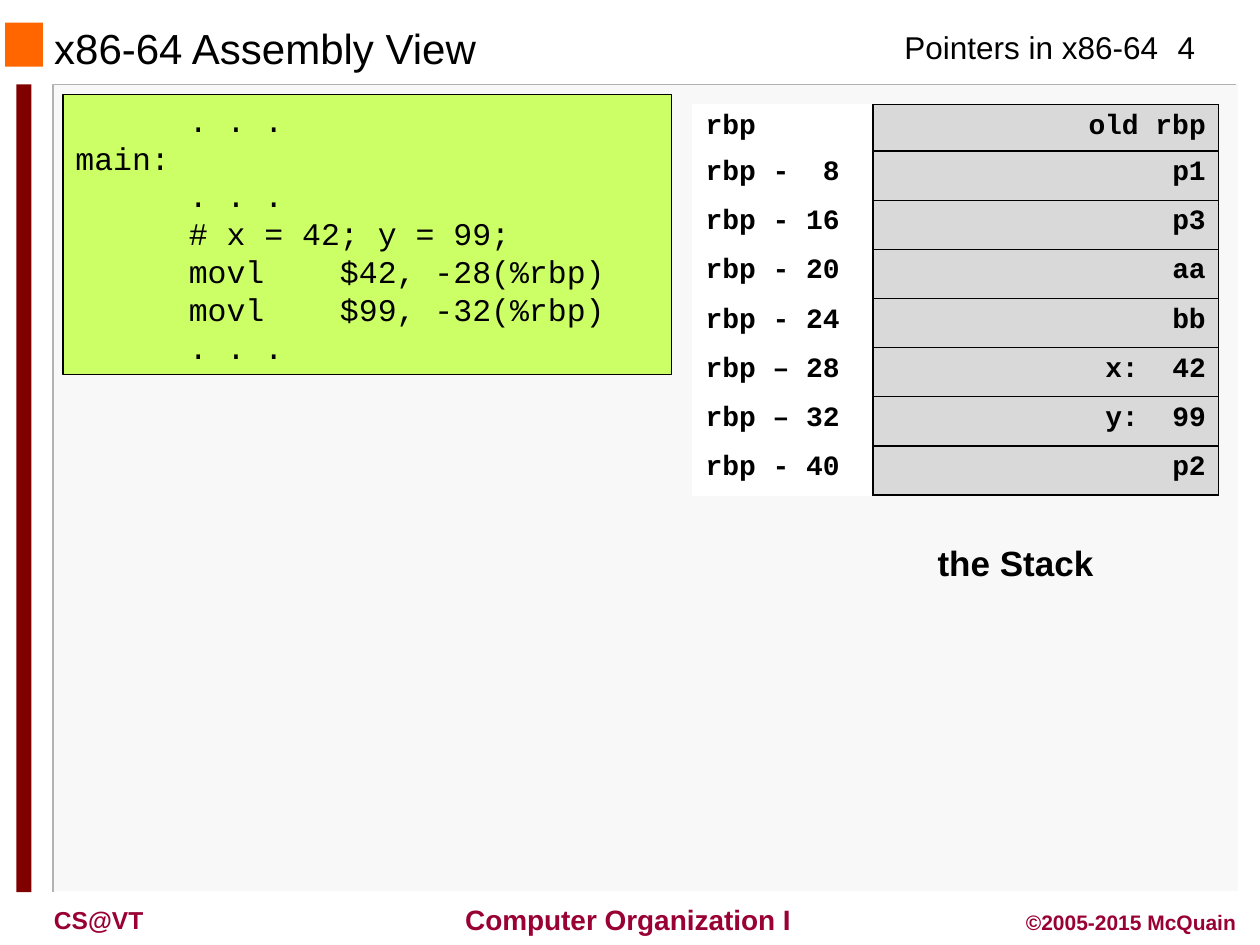
from typing import NamedTuple

from lxml.etree import SubElement
from pptx import Presentation
from pptx.dml.color import RGBColor
from pptx.enum.shapes import MSO_SHAPE
from pptx.enum.text import MSO_ANCHOR, PP_ALIGN
from pptx.oxml.ns import qn
from pptx.util import Inches, Pt

BLACK = RGBColor(0x00, 0x00, 0x00)
WHITE = RGBColor(0xFF, 0xFF, 0xFF)
PANEL = RGBColor(0xF8, 0xF8, 0xF8)
EDGE = RGBColor(0xB2, 0xB2, 0xB2)
ORANGE = RGBColor(0xFF, 0x66, 0x00)
MAROON = RGBColor(0x80, 0x00, 0x00)
CRIMSON = RGBColor(0x99, 0x00, 0x33)
LIME = RGBColor(0xCC, 0xFF, 0x66)
GREY = RGBColor(0xD9, 0xD9, 0xD9)

SANS, MONO = "Arial", "Courier New"
LEFT, CENTER, RIGHT = PP_ALIGN.LEFT, PP_ALIGN.CENTER, PP_ALIGN.RIGHT
CODE_INDENT = 0.9  # six characters of 18 pt Courier New


class Box(NamedTuple):
    left: float
    top: float
    width: float
    height: float

    def lengths(self) -> list:
        return [Inches(v) for v in self]


class Label(NamedTuple):
    text: str
    box: Box
    size: int
    color: RGBColor = BLACK
    bold: bool = False
    align: PP_ALIGN = LEFT
    wrap: bool = True
    anchor: MSO_ANCHOR = MSO_ANCHOR.TOP


class CodeLine(NamedTuple):
    text: str
    indent: float = CODE_INDENT


class Slot(NamedTuple):
    address: str
    value: str


LABELS = [
    Label("Pointers in x86-64", Box(7.08, 0.17, 2.24, 0.4), 18, wrap=False),
    Label("4", Box(9.08, 0.17, 0.67, 0.4), 18, align=CENTER),
    Label("Computer Organization I", Box(3.53, 7.11, 2.91, 0.37), 16, CRIMSON,
          True, CENTER, False, MSO_ANCHOR.MIDDLE),
    Label("CS@VT", Box(0.33, 7.13, 1.5, 0.33), 14, CRIMSON, True),
    Label("©2005-2015 McQuain", Box(7.83, 7.17, 2.08, 0.3), 12, CRIMSON, True, RIGHT),
    Label("the Stack", Box(7.08, 4.25, 1.96, 0.44), 20, bold=True, align=CENTER),
]

CODE = [
    CodeLine(". . ."),
    CodeLine("main:", 0),
    CodeLine(". . ."),
    CodeLine("# x = 42; y = 99;"),
    CodeLine("movl    $42, -28(%rbp)"),
    CodeLine("movl    $99, -32(%rbp)"),
    CodeLine(". . ."),
]

STACK = [
    Slot("rbp", "old rbp"),
    Slot("rbp -  8", "p1"),
    Slot("rbp - 16", "p3"),
    Slot("rbp - 20", "aa"),
    Slot("rbp - 24", "bb"),
    Slot("rbp – 28", "x:  42"),
    Slot("rbp – 32", "y:  99"),
    Slot("rbp - 40", "p2"),
]


def write(p, text: str, *, size: int, font: str = SANS, color: RGBColor = BLACK,
          bold: bool = False, align: PP_ALIGN = LEFT, indent: float = 0) -> None:
    p.alignment = align
    if indent:
        p._p.get_or_add_pPr().set("marL", str(Inches(indent)))
    r = p.add_run()
    r.text = text
    r.font.name, r.font.size, r.font.bold = font, Pt(size), bold
    r.font.color.rgb = color


def add_rect(s, box: Box, fill: RGBColor):
    sp = s.shapes.add_shape(MSO_SHAPE.RECTANGLE, *box.lengths())
    sp.shadow.inherit = False
    sp.fill.solid()
    sp.fill.fore_color.rgb = fill
    sp.line.fill.background()
    return sp


def add_corner(s, points: list, color: RGBColor) -> None:
    (x, y), *rest = points
    builder = s.shapes.build_freeform(Inches(x), Inches(y))
    builder.add_line_segments([(Inches(a), Inches(b)) for a, b in rest], close=False)
    sp = builder.convert_to_shape()
    sp.shadow.inherit = False
    sp.fill.background()
    sp.line.color.rgb = color
    sp.line.width = Pt(1)


def add_label(s, label: Label) -> None:
    tf = s.shapes.add_textbox(*label.box.lengths()).text_frame
    tf.word_wrap = label.wrap
    tf.vertical_anchor = label.anchor
    write(tf.paragraphs[0], label.text, size=label.size, color=label.color,
          bold=label.bold, align=label.align)


def add_code(s, box: Box, lines: list) -> None:
    sp = add_rect(s, box, LIME)
    sp.line.color.rgb = BLACK
    sp.line.width = Pt(0.75)
    tf = sp.text_frame
    tf.word_wrap = True
    tf.vertical_anchor = MSO_ANCHOR.TOP
    for i, line in enumerate(lines):
        p = tf.add_paragraph() if i else tf.paragraphs[0]
        write(p, line.text, size=18, font=MONO, indent=line.indent)


def set_borders(cell, sides: dict) -> None:
    tc_pr = cell._tc.get_or_add_tcPr()
    for i, (side, color) in enumerate(sides.items()):
        ln = SubElement(tc_pr, qn(f"a:ln{side}"), w=str(Pt(1)))
        SubElement(SubElement(ln, qn("a:solidFill")), qn("a:srgbClr"), val=str(color))
        tc_pr.insert(i, ln)  # borders come before the cell fill


def add_stack(s, box: Box, slots: list) -> None:
    table = s.shapes.add_table(len(slots), 2, *box.lengths()).table
    table.first_row = table.horz_banding = False
    for column, width in zip(table.columns, (1.43, 2.74)):
        column.width = Inches(width)
    for i, slot in enumerate(slots):
        table.rows[i].height = Inches(0.39 if i else 0.37)
        for j, (text, fill, edge, align) in enumerate((
                (slot.address, WHITE, WHITE, LEFT), (slot.value, GREY, BLACK, RIGHT))):
            cell = table.cell(i, j)
            cell.fill.solid()
            cell.fill.fore_color.rgb = fill
            set_borders(cell, {"L": edge, "R": BLACK, "T": edge, "B": edge})
            write(cell.text_frame.paragraphs[0], text, size=16, font=MONO,
                  bold=True, align=align)


def main() -> None:
    prs = Presentation()
    prs.slide_width, prs.slide_height = Inches(10), Inches(7.5)
    s = prs.slides.add_slide(prs.slide_layouts[5])

    # Panel with its edges, and the colour accents
    add_rect(s, Box(0.43, 0.67, 9.4, 6.41), PANEL)
    add_corner(s, [(9.81, 0.67), (0.42, 0.67), (0.42, 7.08)], EDGE)
    add_corner(s, [(9.83, 0.67), (9.83, 7.08), (0.44, 7.08)], WHITE)
    add_rect(s, Box(0.04, 0.18, 0.3, 0.35), ORANGE)
    add_rect(s, Box(0.13, 0.67, 0.12, 6.41), MAROON)

    # Title
    title = s.shapes.title
    title.left, title.top, title.width, title.height = Box(0.33, 0.19, 6.33, 0.38).lengths()
    title.text_frame.vertical_anchor = MSO_ANCHOR.MIDDLE
    write(title.text_frame.paragraphs[0], "x86-64 Assembly View", size=24)

    # Header, footer and caption
    for label in LABELS:
        add_label(s, label)

    # Code and stack
    add_code(s, Box(0.5, 0.75, 4.83, 2.22), CODE)
    add_stack(s, Box(5.5, 0.83, 4.17, 3.1), STACK)

    prs.save("out.pptx")


if __name__ == "__main__":
    main()
